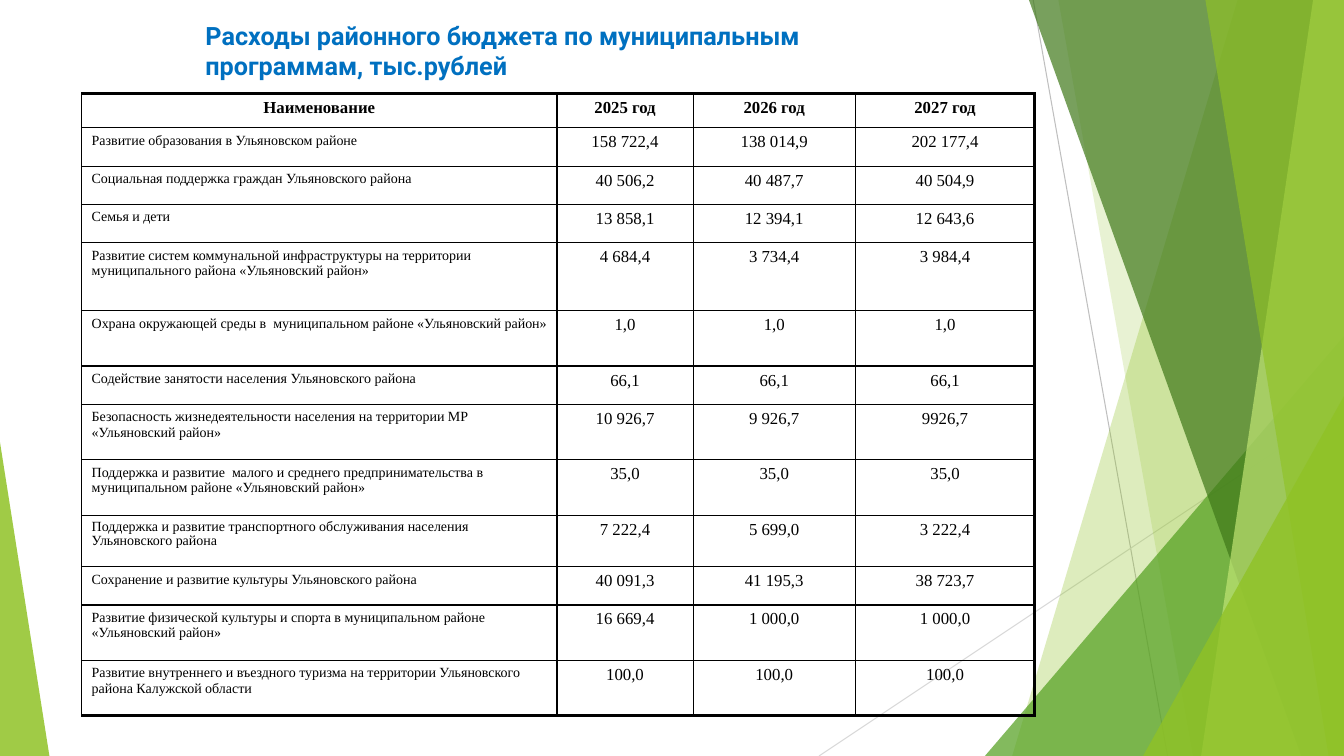
from lxml import etree
from pptx import Presentation
from pptx.dml.color import RGBColor
from pptx.enum.shapes import MSO_CONNECTOR, MSO_SHAPE
from pptx.enum.text import PP_ALIGN
from pptx.oxml.ns import qn
from pptx.util import Pt

STRAIGHT = MSO_CONNECTOR.STRAIGHT
TRIANGLE = MSO_SHAPE.ISOSCELES_TRIANGLE
LEFT, CENTER = PP_ALIGN.LEFT, PP_ALIGN.CENTER

BLACK = RGBColor(0x00, 0x00, 0x00)
BLUE = RGBColor(0x00, 0x70, 0xC0)
LIME = RGBColor(0x90, 0xC2, 0x26)
GREEN = RGBColor(0x54, 0xA0, 0x21)
DARK_GREEN = RGBColor(0x3F, 0x78, 0x19)
PALE_LIME = RGBColor(0xC0, 0xE4, 0x74)
GREY = RGBColor(0xBF, 0xBF, 0xBF)
LIGHT_GREY = RGBColor(0xD9, 0xD9, 0xD9)

SLIDE_W, SLIDE_H = 960, 540
THIN, THICK = 1, 2.25

TITLE = "Расходы районного бюджета по муниципальным программам, тыс.рублей"
COL_WIDTHS = [339.6, 97.2, 115.9, 128.2]
HEADER = ("Наименование", "2025 год", "2026 год", "2027 год")
HEADER_HEIGHT = 24.3
# Row height, programme, then one amount per year
PROGRAMMES = [
    (27.4, "Развитие образования в Ульяновском районе",
     "158 722,4", "138 014,9", "202 177,4"),
    (27.4, "Социальная поддержка граждан Ульяновского района",
     "40 506,2", "40 487,7", "40 504,9"),
    (27.4, "Семья и дети", "13 858,1", "12 394,1", "12 643,6"),
    (48.4, "Развитие систем коммунальной инфраструктуры на территории "
     "муниципального района «Ульяновский район»",
     "4 684,4", "3 734,4", "3 984,4"),
    (39.6, "Охрана окружающей среды в  муниципальном районе "
     "«Ульяновский район»", "1,0", "1,0", "1,0"),
    (27.4, "Содействие занятости населения Ульяновского района",
     "66,1", "66,1", "66,1"),
    (39.6, "Безопасность жизнедеятельности населения на территории МР "
     "«Ульяновский район»", "10 926,7", "9 926,7", "9926,7"),
    (39.6, "Поддержка и развитие  малого и среднего предпринимательства в "
     "муниципальном районе «Ульяновский район»", "35,0", "35,0", "35,0"),
    (36.7, "Поддержка и развитие транспортного обслуживания населения "
     "Ульяновского района", "7 222,4", "5 699,0", "3 222,4"),
    (27.4, "Сохранение и развитие культуры Ульяновского района",
     "40 091,3", "41 195,3", "38 723,7"),
    (39.6, "Развитие физической культуры и спорта в муниципальном районе "
     "«Ульяновский район»", "16 669,4", "1 000,0", "1 000,0"),
    (39.6, "Развитие внутреннего и въездного туризма на территории "
     "Ульяновского района Калужской области", "100,0", "100,0", "100,0"),
]
TIGHT_ROW = 9  # this programme name has 90% line spacing


def paint(sp, color, alpha):
    """Fill a facet with a partly transparent colour and no outline."""
    sp.shadow.inherit = False
    sp.line.fill.background()
    sp.fill.solid()
    sp.fill.fore_color.rgb = color
    clr = sp.fill._xPr.find(qn("a:solidFill"))[0]
    etree.SubElement(clr, qn("a:alpha"), val=str(alpha * 1000))


def add_triangle(s, left, top, width, height, apex, color, alpha):
    sp = s.shapes.add_shape(TRIANGLE, Pt(left), Pt(top), Pt(width), Pt(height))
    sp.adjustments[0] = apex
    paint(sp, color, alpha)


def add_right_facets(s, left, top, width, height):
    right, bottom = left + width, top + height

    def hairline(x1, y1, x2, y2, color):
        line = s.shapes.add_connector(STRAIGHT, Pt(left + x1), Pt(top + y1),
                                      Pt(left + x2), Pt(top + y2))
        line.line.color.rgb = color
        line.line.width = Pt(0.75)
        etree.SubElement(line._element.spPr, qn("a:effectLst"))

    def band(top_x, bottom_x, color, alpha):
        fb = s.shapes.build_freeform(Pt(left + top_x), Pt(top))
        fb.add_line_segments([(Pt(right), Pt(top)), (Pt(right), Pt(bottom)),
                              (Pt(left + bottom_x), Pt(bottom))], close=True)
        paint(fb.convert_to_shape(), color, alpha)

    def corner(x, y, color, alpha):
        add_triangle(s, left + x, top + y, width - x, height - y, 1,
                     color, alpha)

    hairline(153, 0, 249, height, GREY)
    hairline(width, 290, 0, height, LIGHT_GREY)
    band(299, 138, LIME, 30)
    band(171, 267, LIME, 20)
    corner(118.5, 240, GREEN, 72)
    band(150, 344.5, DARK_GREEN, 70)
    band(353, 273, PALE_LIME, 70)
    band(276, 364, LIME, 65)
    corner(231.5, 283, LIME, 80)


def add_title(s, left, top, width, height):
    tf = s.shapes.add_textbox(Pt(left), Pt(top), Pt(width),
                              Pt(height)).text_frame
    tf.word_wrap = True
    tf.text = TITLE
    font = tf.paragraphs[0].runs[0].font
    font.name, font.size, font.bold = "Roboto", Pt(18), True
    font.color.rgb = BLUE


def set_borders(cell, **widths):
    tc_pr = cell._tc.get_or_add_tcPr()
    for i, side in enumerate("LRTB"):
        ln = etree.Element(qn("a:ln" + side), w=str(Pt(widths[side])))
        fill = etree.SubElement(ln, qn("a:solidFill"))
        etree.SubElement(fill, qn("a:srgbClr"), val=str(BLACK))
        tc_pr.insert(i, ln)


def add_budget_table(s, left, top, width, height):
    rows = [(HEADER_HEIGHT, *HEADER)] + PROGRAMMES
    last_row, last_col = len(rows) - 1, len(HEADER) - 1
    table = s.shapes.add_table(len(rows), len(HEADER), Pt(left), Pt(top),
                               Pt(width), Pt(height)).table
    table.first_row = table.horz_banding = False
    for col, col_width in zip(table.columns, COL_WIDTHS):
        col.width = Pt(col_width)
    for r, (row_height, *texts) in enumerate(rows):
        table.rows[r].height = Pt(row_height)
        for c, text in enumerate(texts):
            is_name = r > 0 and c == 0
            cell = table.cell(r, c)
            cell.fill.background()
            set_borders(cell, L=THIN, R=THICK if c == last_col else THIN,
                        T=THICK if r == 0 else THIN,
                        B=THICK if r == last_row else THIN)
            p = cell.text_frame.paragraphs[0]
            p.text = text
            p.alignment = LEFT if is_name else CENTER
            if is_name and r == TIGHT_ROW:
                p.line_spacing = 0.9
            font = p.runs[0].font
            font.name, font.bold = "Times New Roman", r == 0
            font.size = Pt(10 if is_name else 12)
            font.color.rgb = BLACK


def main():
    prs = Presentation()
    prs.slide_width, prs.slide_height = Pt(SLIDE_W), Pt(SLIDE_H)
    s = prs.slides.add_slide(prs.slide_layouts[6])

    # Green facets at the slide edges
    add_right_facets(s, 585, 0, 375, SLIDE_H)
    add_triangle(s, 0, 316, 35.3, 224, 0, LIME, 85)

    # Budget by programme, with its title
    add_budget_table(s, 58.3, 67, sum(COL_WIDTHS), 444.4)
    add_title(s, 139.7, 10.8, 480.2, 51)

    prs.save("out.pptx")


if __name__ == "__main__":
    main()
